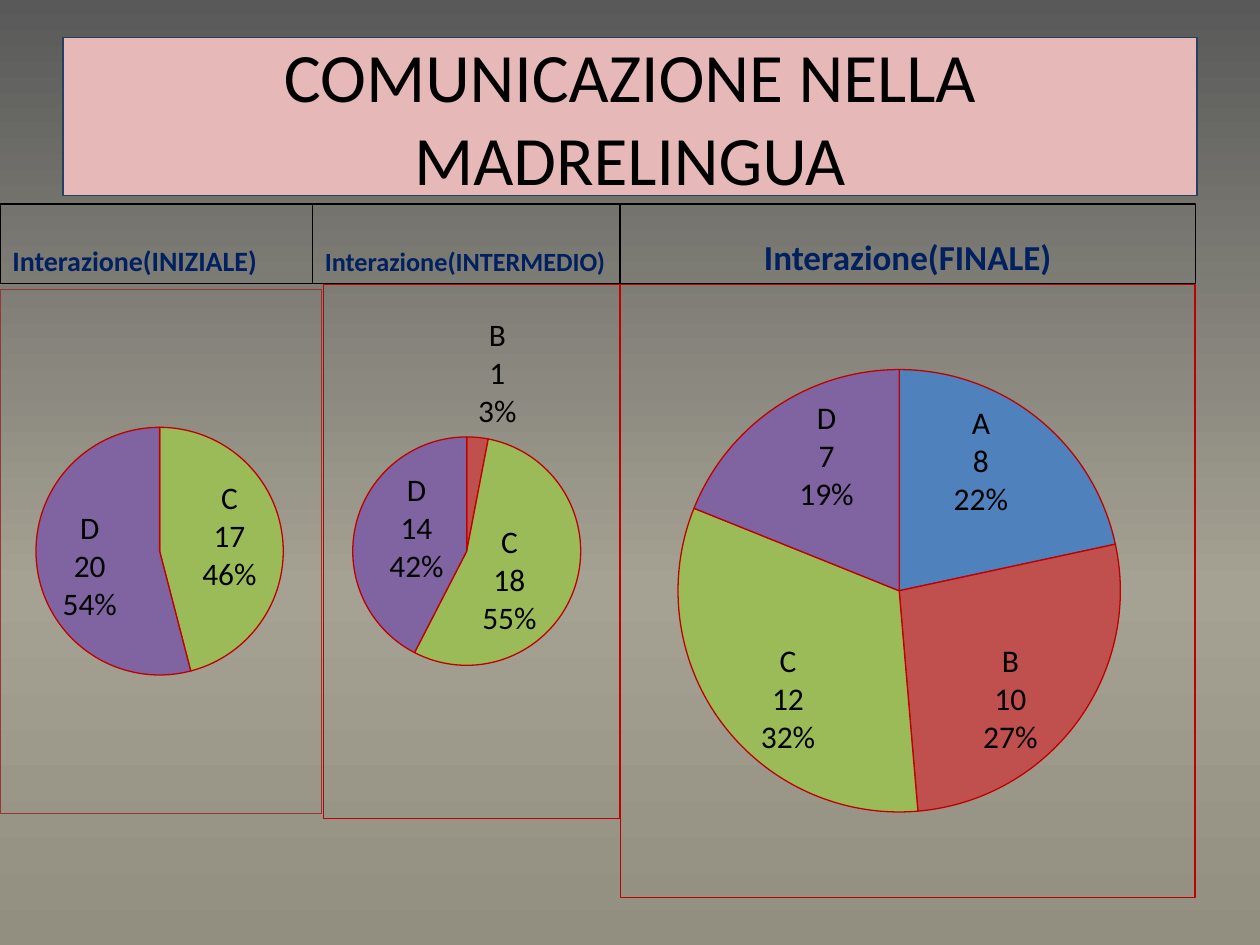
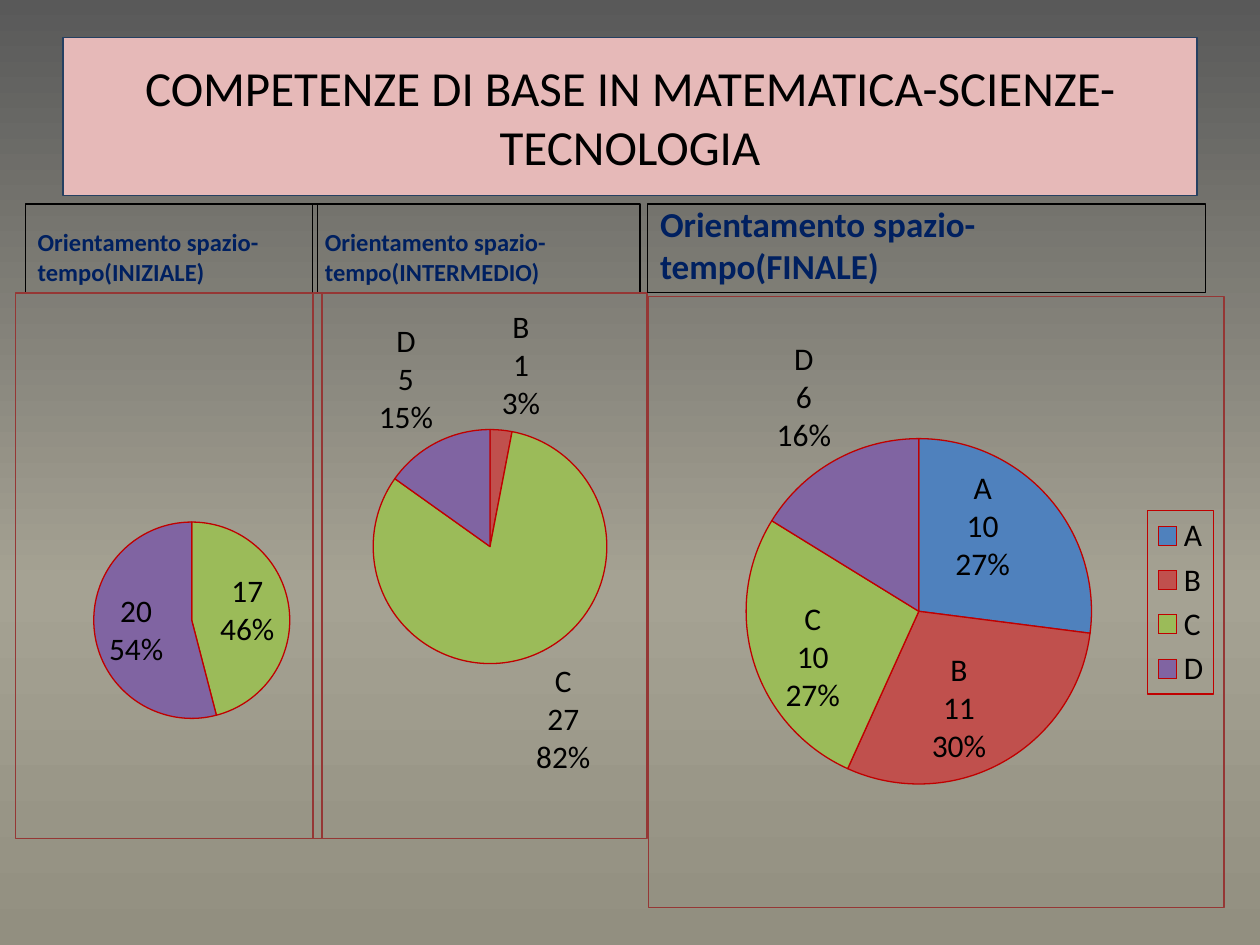
from copy import deepcopy

from pptx import Presentation
from pptx import util as u
from pptx.chart import data
from pptx.dml import color
from pptx.enum import chart as charts, shapes, text
from pptx.oxml import ns, parse_xml

INK, NAVY, ROSE, RED, WINE = "000000", "002060", "E6B9B8", "C00000", "953735"
SLICES = ["4F81BD", "C0504D", "9BBB59", "8064A2"]
SKY = [(0, "595959"), (0.62, "A5A293"), (1, "928F80")]
PLOT = (0.1, 0.04, 0.77, 0.92)
TOP = 1.62


def rgb(code):
    return color.RGBColor.from_string(code)


def node(tag, body="", attrs=""):
    return parse_xml(f"<c:{tag} {ns.nsdecls('c', 'a')} {attrs}>{body}</c:{tag}>")


def frame(code):
    line = f'<a:solidFill><a:srgbClr val="{code}"/></a:solidFill>'
    return node("spPr", f'<a:noFill/><a:ln w="9525">{line}</a:ln>')


class Deck:
    """Holds the shared style and the current slide."""

    def __init__(self):
        self.prs = Presentation()
        self.prs.slide_width, self.prs.slide_height = u.Inches(10), u.Inches(7.5)
        self.slide = None
        self.sky()

    def sky(self):
        master = self.prs.slide_master
        fill = master.background.fill
        fill.gradient()
        fill.gradient_angle = 270
        stops = master.element.find(".//" + ns.qn("a:gsLst"))
        stops.append(deepcopy(stops[0]))
        for stop, (place, code) in zip(fill.gradient_stops, SKY):
            stop.position = place
            stop.color.rgb = rgb(code)

    def page(self, title, size):
        self.slide = self.prs.slides.add_slide(self.prs.slide_layouts[6])
        box = self.box((0.5, 0.3, 9, 1.25), title, size, INK, "254061", center=True)
        box.fill.solid()
        box.fill.fore_color.rgb = rgb(ROSE)
        box.text_frame.vertical_anchor = text.MSO_ANCHOR.MIDDLE

    def box(self, at, words, size, ink, edge, bold=False, center=False):
        box = self.slide.shapes.add_shape(shapes.MSO_SHAPE.RECTANGLE, *map(u.Inches, at))
        box.shadow.inherit = False
        box.fill.background()
        box.line.color.rgb = rgb(edge)
        box.line.width = u.Pt(0.75)
        body = box.text_frame
        body.text = words
        body.word_wrap = True
        body.vertical_anchor = text.MSO_ANCHOR.BOTTOM
        para = body.paragraphs[0]
        para.alignment = text.PP_ALIGN.CENTER if center else text.PP_ALIGN.LEFT
        font = para.runs[0].font
        font.name, font.size, font.bold = "Calibri", u.Pt(size), bold
        font.color.rgb = rgb(ink)
        return box

    def head(self, left, width, height, words, size, center=False):
        self.box((left, TOP, width, height), words, size, NAVY, INK, True, center)

    def pie(self, at, vals, edge, plot=PLOT, cats="ABCD", names=True, legend=False):
        feed = data.CategoryChartData()
        feed.categories = list(cats)
        feed.add_series("Series 1", vals)
        kind = charts.XL_CHART_TYPE.PIE
        chart = self.slide.shapes.add_chart(kind, *map(u.Inches, at), feed).chart
        chart.has_title = False
        chart.font.name, chart.font.size = "Calibri", u.Pt(18)
        chart.font.color.rgb = rgb(INK)
        root = chart.element
        root.find(ns.qn("c:chart")).addnext(frame(edge))
        self.place(root.find(".//" + ns.qn("c:plotArea")), plot)
        chart.plots[0].vary_by_categories = True
        series = chart.plots[0].series[0]
        for spot, code in enumerate(SLICES):
            look = series.points[spot].format
            look.fill.solid()
            look.fill.fore_color.rgb = rgb(code)
            look.line.color.rgb = rgb(RED)
            look.line.width = u.Pt(0.75)
        self.tags(series, vals, names)
        chart.has_legend = legend
        if legend:
            chart.legend.position = charts.XL_LEGEND_POSITION.RIGHT
            chart.legend.include_in_layout = False
            root.find(".//" + ns.qn("c:legend")).append(frame(RED))

    def place(self, area, plot):
        for old in area.findall(ns.qn("c:layout")):
            area.remove(old)
        parts = [("layoutTarget", "inner"), ("xMode", "edge"), ("yMode", "edge")]
        parts += zip("xywh", plot)
        body = "".join(f'<c:{tag} val="{val}"/>' for tag, val in parts)
        area.insert(0, node("layout", f"<c:manualLayout>{body}</c:manualLayout>"))

    def tags(self, series, vals, names):
        tags = series.data_labels
        tags.show_value = tags.show_percentage = True
        tags.show_category_name = names
        tags.position = charts.XL_LABEL_POSITION.BEST_FIT
        root = series.data_labels._element
        root.find(ns.qn("c:showBubbleSize")).addnext(node("separator", "\n"))
        empty = [spot for spot, val in enumerate(vals) if not val]
        for rank, spot in enumerate(empty):
            root.insert(rank, node("dLbl", f'<c:idx val="{spot}"/><c:delete val="1"/>'))


def main():
    deck = Deck()

    deck.page("COMUNICAZIONE NELLA MADRELINGUA", 39.6)
    deck.head(0, 2.48, 0.63, "Interazione(INIZIALE)", 16)
    deck.pie((0, 2.29, 2.56, 4.17), (0, 0, 17, 20), WINE, (0.11, 0.06, 0.77, 0.88))
    deck.head(2.48, 2.44, 0.63, "Interazione(INTERMEDIO)", 15)
    deck.pie((2.56, 2.25, 2.36, 4.25), (0, 1, 18, 14), RED)
    deck.head(4.92, 4.57, 0.63, "Interazione(FINALE)", 20, center=True)
    deck.pie((4.92, 2.25, 4.57, 4.88), (8, 10, 12, 7), RED)

    deck.page("COMPETENZE DI BASE IN MATEMATICA-SCIENZE-TECNOLOGIA", 28)
    skill = "Orientamento spazio-tempo"
    deck.head(0.2, 2.32, 0.7, f"{skill}(INIZIALE)", 14)
    deck.pie((0.12, 2.32, 2.44, 4.34), (0, 0, 17, 20), WINE,
             (0.25, 0.42, 0.65, 0.36), cats="1234", names=False)
    deck.head(2.48, 2.6, 0.7, f"{skill}(INTERMEDIO)", 14)
    deck.pie((2.48, 2.32, 2.66, 4.34), (0, 1, 27, 5), WINE, (0.18, 0.25, 0.7, 0.43))
    deck.head(5.14, 4.43, 0.7, f"{skill}(FINALE)", 20)
    deck.pie((5.14, 2.35, 4.58, 4.86), (10, 11, 10, 6), WINE,
             (0.17, 0.23, 0.6, 0.57), legend=True)

    deck.prs.save("out.pptx")


if __name__ == "__main__":
    main()
